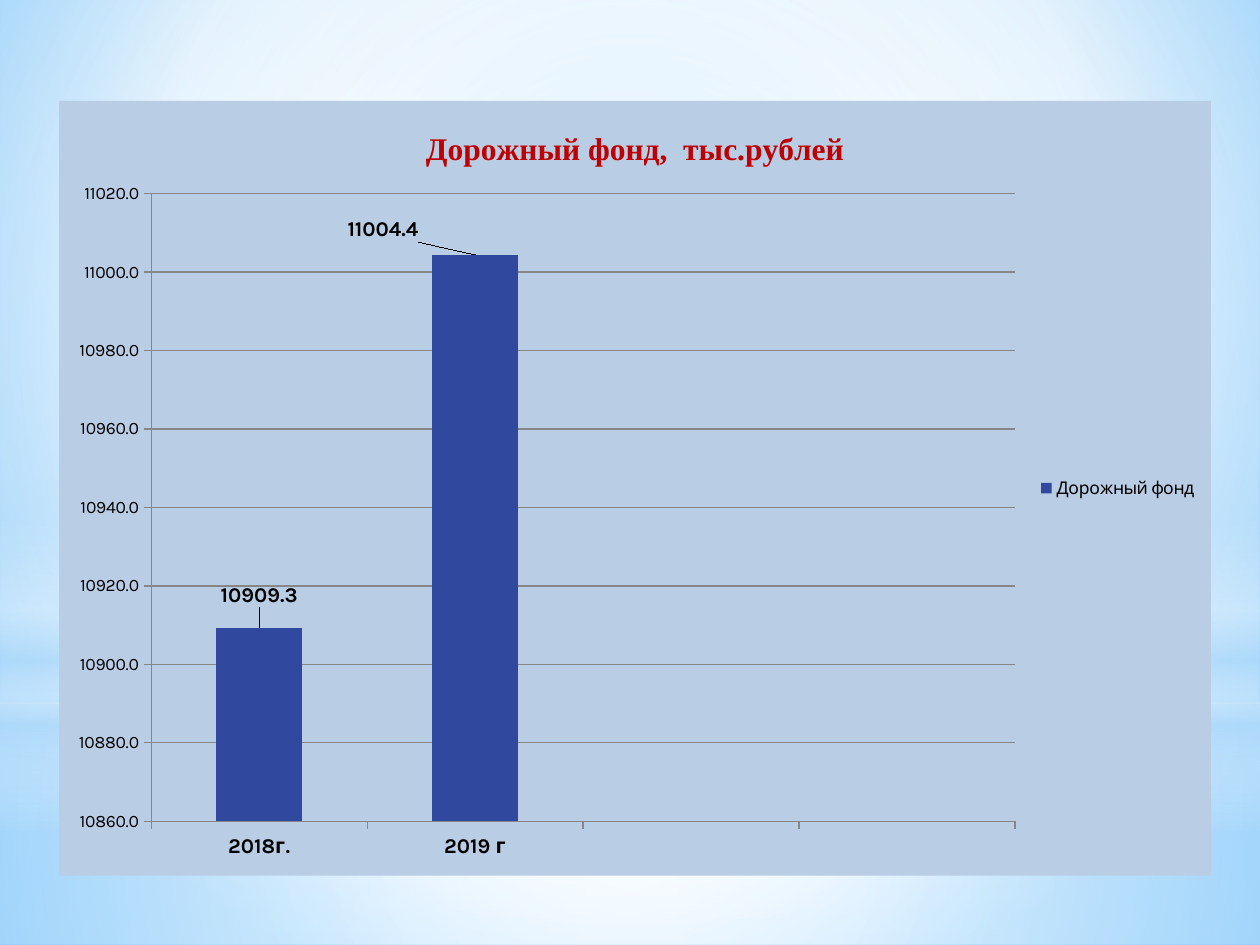
from dataclasses import dataclass

import lxml.etree
import pptx
import pptx.chart.data
import pptx.dml.color
import pptx.enum.chart
import pptx.enum.shapes
import pptx.oxml
import pptx.oxml.ns
import pptx.util

Inches = pptx.util.Inches
Pt = pptx.util.Pt
qn = pptx.oxml.ns.qn
Kind = pptx.enum.shapes.MSO_SHAPE
NS = pptx.oxml.ns.nsdecls("a", "c")
MID = (50, 50, 50, 50)


@dataclass
class Glow:
    kind: int
    top: float
    height: float
    stops: list
    focus: tuple | None = MID


GLOWS = [
    Glow(Kind.RECTANGLE, 5.58, 1.92,
         [(0, "FFFFFF", 91), (37, "FFFFFF", 76), (100, "B4DCFA", 79)]),
    Glow(Kind.RECTANGLE, 0, 5.58,
         [(0, "FFFFFF", 89), (48, "FFFFFF", 62), (100, "B4DCFA", 79)]),
    Glow(Kind.RECTANGLE, 4.12, 2.5,
         [(0, "FFFFFF", 0), (29, "FFFFFF", 30), (45, "B4DCFA", 40),
          (55, "FFFFFF", 26), (65, "B4DCFA", 60), (100, "FFFFFF", 0)], None),
    Glow(Kind.OVAL, 1.75, 5.58, [(0, "FFFFFF", 100), (56, "FFFFFF", 0)]),
]
SKY = [(0, "9ED5FF", 100), (60, "FFFFFF", 100), (100, "5BB9FF", 100)]


def tint(code: str) -> pptx.dml.color.RGBColor:
    return pptx.dml.color.RGBColor.from_string(code)


def blend(fill, root, stops: list, focus: tuple | None) -> None:
    fill.solid()
    plain = root.find(".//" + qn("a:solidFill"))
    marks = "".join(
        f'<a:gs pos="{at * 1000}"><a:srgbClr val="{code}">'
        f'<a:alpha val="{alpha * 1000}"/></a:srgbClr></a:gs>'
        for at, code, alpha in stops)
    if focus:
        edges = " ".join(f'{side}="{part * 1000}"' for side, part in zip("ltrb", focus))
        shade = f'<a:path path="circle"><a:fillToRect {edges}/></a:path>'
    else:
        shade = '<a:lin ang="5400000" scaled="0"/>'
    plain.getparent().replace(plain, pptx.oxml.parse_xml(
        f'<a:gradFill {NS} rotWithShape="1"><a:gsLst>{marks}</a:gsLst>{shade}</a:gradFill>'))


def draw(slide, glow: Glow) -> None:
    shape = slide.shapes.add_shape(
        glow.kind, 0, Inches(glow.top), Inches(10), Inches(glow.height))
    shape.shadow.inherit = False
    shape.line.fill.background()
    blend(shape.fill, shape.element, glow.stops, glow.focus)


def style(font, size: float, bold: bool = False, color: str = "000000",
          face: str = "Karla") -> None:
    font.size, font.bold, font.name = Pt(size), bold, face
    font.color.rgb = tint(color)


def write(frame, text: str, **form) -> None:
    run = frame.paragraphs[0].add_run()
    run.text = text
    style(run.font, **form)


def place(x: float, y: float, extra: str = "", inner: str = ""):
    return pptx.oxml.parse_xml(
        f'<c:layout {NS}><c:manualLayout>{inner}<c:x val="{x}"/><c:y val="{y}"/>'
        f'{extra}</c:manualLayout></c:layout>')


def rule(line) -> None:
    line.color.rgb = tint("868686")
    line.width = Pt(0.75)


def plot(slide) -> None:
    enum = pptx.enum.chart
    data = pptx.chart.data.CategoryChartData(number_format="0.0")
    data.categories = ["2018г.", "2019 г", "", ""]
    data.add_series("Дорожный фонд", [10909.3, 11004.4, None, None])
    chart = slide.shapes.add_chart(
        enum.XL_CHART_TYPE.COLUMN_CLUSTERED, Inches(0.47), Inches(0.8),
        Inches(9.14), Inches(6.15), data).chart
    style(chart.font, 10)
    root = chart.element
    root.find(qn("c:txPr")).addprevious(pptx.oxml.parse_xml(
        f'<c:spPr {NS}><a:solidFill><a:srgbClr val="B9CDE5"/></a:solidFill>'
        '<a:ln><a:noFill/></a:ln></c:spPr>'))
    chart.has_title = True
    write(chart.chart_title.text_frame, "Дорожный фонд,  тыс.рублей",
          size=18, bold=True, color="C00000", face="Times New Roman")
    chart.chart_title.include_in_layout = False
    chart.has_legend = True
    chart.legend.position = enum.XL_LEGEND_POSITION.RIGHT
    chart.legend.include_in_layout = False
    style(chart.legend.font, 10)

    area = root.find(".//" + qn("c:plotArea"))
    for old in area.findall(qn("c:layout")):
        area.remove(old)
    area.insert(0, place(
        0.08, 0.12, '<c:w val="0.75"/><c:h val="0.81"/>',
        '<c:layoutTarget val="inner"/><c:xMode val="edge"/><c:yMode val="edge"/>'))

    cats, vals = chart.category_axis, chart.value_axis
    for axis, size, bold in ((cats, 12, True), (vals, 10, False)):
        axis.major_tick_mark = enum.XL_TICK_MARK.OUTSIDE
        style(axis.tick_labels.font, size, bold)
        rule(axis.format.line)
    vals.minimum_scale, vals.maximum_scale, vals.major_unit = 10860, 11020, 20
    vals.tick_labels.number_format = "0.0"
    vals.tick_labels.number_format_is_linked = False
    vals.has_major_gridlines = True
    rule(vals.major_gridlines.format.line)

    bars = chart.plots[0]
    bars.gap_width = 150
    bars.vary_by_categories = False
    row = bars.series[0]
    row.format.fill.solid()
    row.format.fill.fore_color.rgb = tint("31489F")
    row.data_labels.show_value = True
    style(row.data_labels.font, 12, True)
    for at, (x, y) in enumerate([(0, -0.02), (-0.08, -0.01)]):
        label = row.points[at].data_label
        label.position = enum.XL_LABEL_POSITION.OUTSIDE_END
        style(label.font, 12, True)
        item = row.data_labels._element.findall(qn("c:dLbl"))[at]
        item.insert(1, place(x, y))


def main() -> None:
    deck = pptx.Presentation()
    deck.slide_width, deck.slide_height = Inches(10), Inches(7.5)
    slide = deck.slides.add_slide(deck.slide_layouts[6])
    blend(slide.background.fill, slide.element, SKY, (20, 10, 20, 60))
    for glow in GLOWS:
        draw(slide, glow)
    plot(slide)
    deck.save("out.pptx")


if __name__ == "__main__":
    main()
